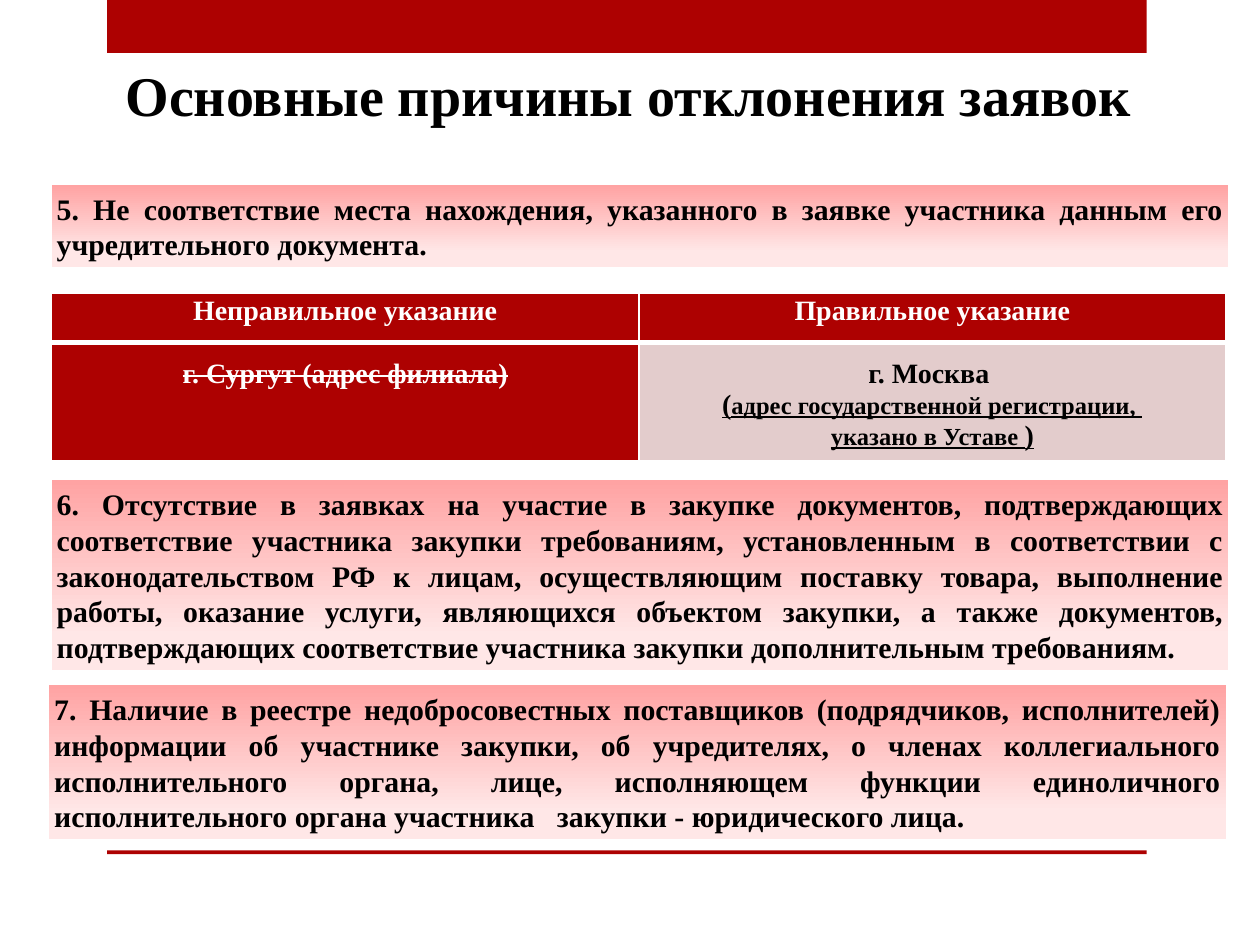
from lxml import etree
from pptx import Presentation
from pptx.dml.color import RGBColor
from pptx.enum import shapes, text
from pptx.oxml import parse_xml
from pptx.oxml.ns import nsdecls, qn
from pptx.util import Inches, Pt

RED, WHITE, BLACK, ROSE = "AD0101", "FFFFFF", "000000", "E3CCCC"
PINK_STOPS = [(0, "FFA3A3"), (82, "FFE7E7"), (100, "FFE4E4")]

REASONS = [
    (0.41, 1.47, 0.65,
     "5. Не соответствие места нахождения, указанного в заявке участника данным "
     "его учредительного документа."),
    (0.41, 3.81, 1.51,
     "6. Отсутствие в заявках на участие в закупке документов, подтверждающих "
     "соответствие участника закупки требованиям, установленным в соответствии с "
     "законодательством РФ к лицам, осуществляющим поставку товара, выполнение "
     "работы, оказание услуги, являющихся объектом закупки, а также документов, "
     "подтверждающих соответствие участника закупки дополнительным требованиям."),
    (0.39, 5.44, 1.22,
     "7. Наличие в реестре недобросовестных поставщиков (подрядчиков, "
     "исполнителей) информации об участнике закупки, об учредителях, о членах "
     "коллегиального исполнительного органа, лице, исполняющем функции единоличного "
     "исполнительного органа участника   закупки - юридического лица."),
]


def rgb(color):
    return RGBColor.from_string(color)


def set_font(font, size, color=BLACK):
    font.name = "Times New Roman"
    font.size = Pt(size)
    font.bold = True
    font.color.rgb = rgb(color)


def set_margins(tf, size=0.04):
    tf.margin_left = tf.margin_right = Inches(size)
    tf.margin_top = tf.margin_bottom = Inches(size)


def add_rect(s, x, y, w, h):
    sp = s.shapes.add_shape(shapes.MSO_SHAPE.RECTANGLE,
                            Inches(x), Inches(y), Inches(w), Inches(h))
    sp.shadow.inherit = False
    sp.line.fill.background()
    return sp


def add_bar(s, y, h):
    sp = add_rect(s, 0.85, y, 8.25, h)
    sp.fill.solid()
    sp.fill.fore_color.rgb = rgb(RED)


def fill_pink(sp):
    """Fill with a vertical gradient of three stops."""
    stops = "".join(f'<a:gs pos="{pos * 1000}"><a:srgbClr val="{color}"/></a:gs>'
                    for pos, color in PINK_STOPS)
    grad = parse_xml(f'<a:gradFill {nsdecls("a")} rotWithShape="1"><a:gsLst>{stops}'
                     '</a:gsLst><a:lin ang="5400000" scaled="0"/></a:gradFill>')
    sp._element.spPr.find(qn("a:prstGeom")).addnext(grad)


def add_reason(s, x, y, h, words):
    sp = add_rect(s, x, y, 9.34, h)
    fill_pink(sp)
    tf = sp.text_frame
    tf.word_wrap = True
    tf.vertical_anchor = text.MSO_ANCHOR.MIDDLE
    set_margins(tf)
    p = tf.paragraphs[0]
    p.text = words
    p.alignment = text.PP_ALIGN.JUSTIFY
    set_font(p.font, 17)


def add_title(s, words):
    title = s.shapes.title
    title.left, title.top = Inches(0.9), Inches(0.44)
    title.width, title.height = Inches(8.18), Inches(0.62)
    tf = title.text_frame
    tf.vertical_anchor = text.MSO_ANCHOR.TOP
    tf.auto_size = text.MSO_AUTO_SIZE.NONE
    set_margins(tf)
    p = tf.paragraphs[0]
    p.text = words
    p.alignment = text.PP_ALIGN.CENTER
    set_font(p.font, 32)


def set_borders(cell, widths):
    tcPr = cell._tc.get_or_add_tcPr()
    for side, width in zip("LRTB", widths):
        ln = etree.SubElement(tcPr, qn(f"a:ln{side}"), w=str(Pt(width)))
        fill = etree.SubElement(ln, qn("a:solidFill"))
        etree.SubElement(fill, qn("a:srgbClr"), val=WHITE)


def fill_cell(cell, lines, fill, color, spacing, bottom=1):
    """Write lines of (text, size, underline, strike) runs; spacing is for the first."""
    set_borders(cell, (1, 1, 1, bottom))
    cell.fill.solid()
    cell.fill.fore_color.rgb = rgb(fill)
    cell.margin_left = cell.margin_right = Inches(0.07)
    cell.margin_top = cell.margin_bottom = 0
    tf = cell.text_frame
    for i, runs in enumerate(lines):
        p = tf.add_paragraph() if i else tf.paragraphs[0]
        p.alignment = text.PP_ALIGN.CENTER
        p.line_spacing = 1.0 if i else spacing
        for words, size, underline, strike in runs:
            r = p.add_run()
            r.text = words
            set_font(r.font, size, color)
            r.font.underline = underline
            if strike:
                r._r.get_or_add_rPr().set("strike", "sngStrike")


def add_address_table(s):
    table = s.shapes.add_table(2, 2, Inches(0.41), Inches(2.33),
                               Inches(9.32), Inches(1.33)).table
    for row, height in zip(table.rows, (0.39, 0.94)):
        row.height = Inches(height)
    for col, heading in enumerate(("Неправильное указание", "Правильное указание")):
        fill_cell(table.cell(0, col), [[(heading, 16, False, False)]],
                  RED, WHITE, 1.07, bottom=3)
    wrong = [[("г. Сургут (адрес филиала)", 16, False, True)]]
    right = [
        [("г. Москва ", 16, False, False)],
        [("(", 16, True, False),
         ("адрес государственной регистрации, ", 14, True, False)],
        [("указано в Уставе ", 14, True, False), (")", 16, True, False)],
    ]
    fill_cell(table.cell(1, 0), wrong, RED, WHITE, 1.5)
    fill_cell(table.cell(1, 1), right, ROSE, BLACK, 1.5)


def main():
    prs = Presentation()
    prs.slide_width, prs.slide_height = Inches(10), Inches(7.5)
    s = prs.slides.add_slide(prs.slide_layouts[5])
    add_bar(s, 0, 0.42)
    add_bar(s, 6.75, 0.03)
    add_title(s, "Основные причины отклонения заявок")
    for reason in REASONS:
        add_reason(s, *reason)
    add_address_table(s)
    prs.save("out.pptx")


if __name__ == "__main__":
    main()
